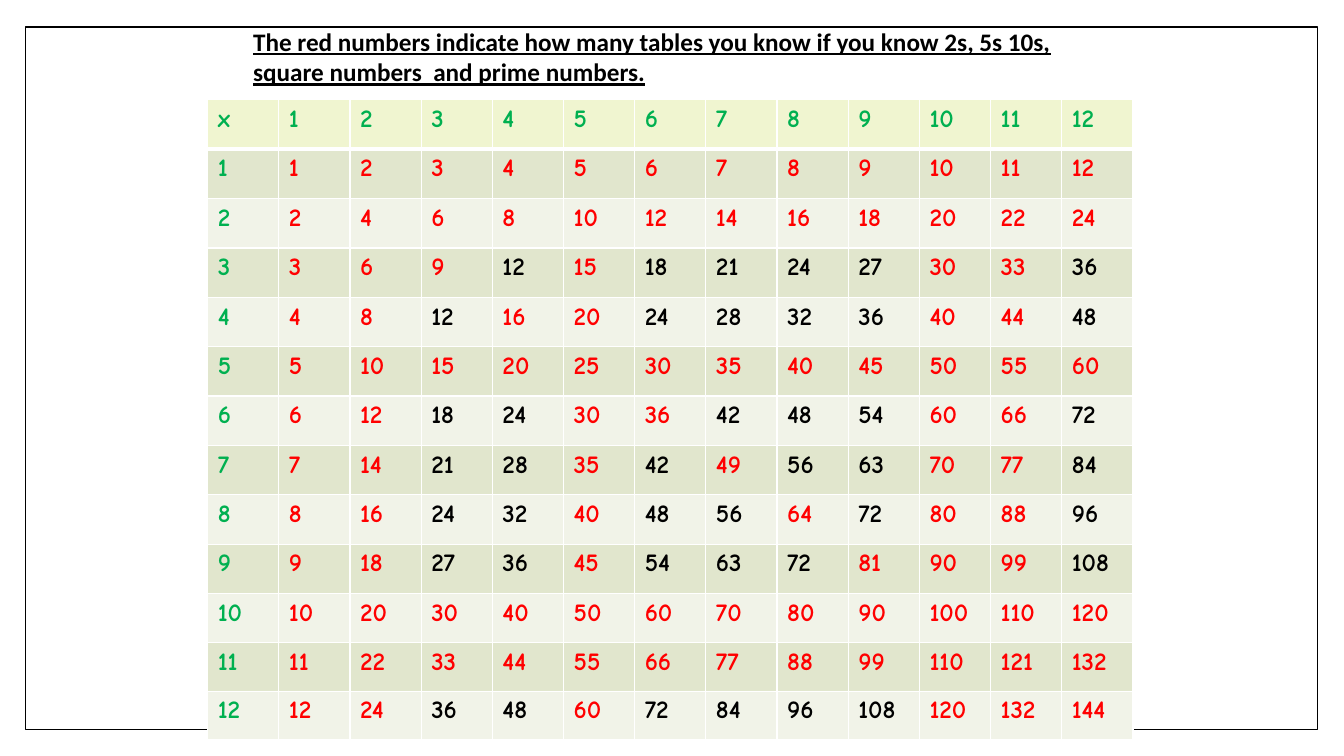
from pptx import Presentation
from pptx import util as u
from pptx.dml.color import RGBColor
from pptx.enum import shapes, text
from pptx.oxml import parse_xml
from pptx.oxml.ns import nsdecls

BLACK = RGBColor(0x00, 0x00, 0x00)
WHITE = RGBColor(0xFF, 0xFF, 0xFF)
RED = RGBColor(0xFF, 0x00, 0x00)
GREEN = RGBColor(0x00, 0xB0, 0x50)
HEADER_FILL = RGBColor(0xF0, 0xF5, 0xD0)
ODD_FILL = RGBColor(0xE1, 0xE6, 0xCD)
EVEN_FILL = RGBColor(0xF1, 0xF3, 0xE8)
KNOWN_TABLES = {1, 2, 5, 10, 11}
SIZE = 13


def write(frame, words, *, font, color, size=18, underline=None):
    para = frame.paragraphs[0]
    para.alignment = text.PP_ALIGN.LEFT
    span = para.add_run()
    span.text = words
    span.font.name = font
    span.font.size = u.Pt(size)
    span.font.bold = True
    span.font.underline = underline
    span.font.color.rgb = color


deck = Presentation()
deck.slide_width = u.Inches(13.33)
deck.slide_height = u.Inches(7.5)
page = deck.slides.add_slide(deck.slide_layouts[5])

border = page.shapes.add_shape(shapes.MSO_SHAPE.RECTANGLE, u.Inches(0.25),
                               u.Inches(0.27), u.Inches(12.82), u.Inches(6.97))
border.shadow.inherit = False
border.fill.solid()
border.fill.fore_color.rgb = WHITE
border.line.color.rgb = BLACK
border.line.width = u.Pt(1)

grid = page.shapes.add_table(SIZE, SIZE, u.Inches(2.06), u.Inches(0.99),
                             u.Inches(9.18), u.Inches(6.3)).table
for row in range(SIZE):
    grid.rows[row].height = u.Inches(0.49 if row < 11 else 0.48)
    for column in range(SIZE):
        if row == 0 or column == 0:
            words, color = str(row + column or "x"), GREEN
        else:
            known = row == column or KNOWN_TABLES & {row, column}
            words, color = str(row * column), RED if known else BLACK
        cell = grid.cell(row, column)
        write(cell.text_frame, words, font="Comic Neue", color=color)
        if row == 0:
            for side, width in (("L", 1), ("R", 1), ("T", 1), ("B", 3)):
                cell._tc.get_or_add_tcPr().append(parse_xml(
                    f'<a:ln{side} {nsdecls("a")} w="{u.Pt(width)}"><a:solidFill>'
                    f'<a:srgbClr val="{WHITE}"/></a:solidFill></a:ln{side}>'))
        cell.fill.solid()
        cell.fill.fore_color.rgb = (HEADER_FILL if row == 0 else
                                    ODD_FILL if row % 2 else EVEN_FILL)

title = page.shapes.title
title.left, title.top = u.Inches(2.41), u.Inches(0.21)
title.width, title.height = u.Inches(8.35), u.Inches(0.71)
title.text_frame.word_wrap = True
title.text_frame.auto_size = text.MSO_AUTO_SIZE.SHAPE_TO_FIT_TEXT
title.text_frame.vertical_anchor = text.MSO_ANCHOR.TOP
write(title.text_frame,
      "The red numbers indicate how many tables you know if you know "
      "2s, 5s 10s, square numbers  and prime numbers.",
      font="Calibri", color=BLACK, underline=True)
page.shapes._spTree.append(title._element)

deck.save("out.pptx")
